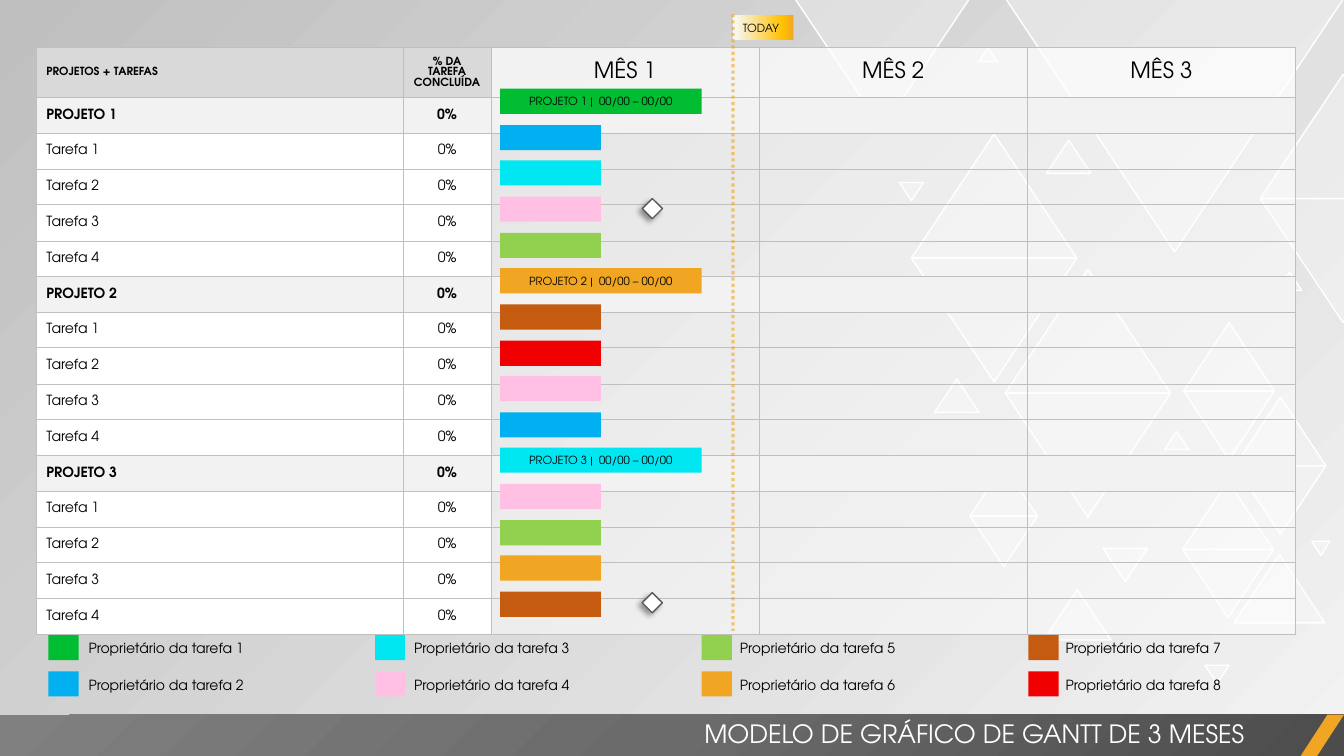
import lxml.etree
import pptx
import pptx.dml.color
import pptx.enum.dml
import pptx.enum.shapes
import pptx.enum.text
import pptx.oxml
import pptx.oxml.ns
import pptx.util

RGB = pptx.dml.color.RGBColor
SHAPE = pptx.enum.shapes.MSO_SHAPE
ALIGN = pptx.enum.text.PP_ALIGN
MIDDLE = pptx.enum.text.MSO_ANCHOR.MIDDLE
qn = pptx.oxml.ns.qn
NS = pptx.oxml.ns.nsdecls("a")

PX = 9144  # 100 px to the inch
FONT = "TeX Gyre Adventor"

BLACK = RGB(0x00, 0x00, 0x00)
WHITE = RGB(0xFF, 0xFF, 0xFF)
HEADER = RGB(0xD9, 0xD9, 0xD9)
BAND = RGB(0xF2, 0xF2, 0xF2)
GRID = RGB(0xBF, 0xBF, 0xBF)
OUTLINE = RGB(0x59, 0x59, 0x59)
CHARCOAL = RGB(0x4C, 0x4C, 0x4C)
DARK_GREY = RGB(0x6B, 0x6B, 0x6B)
MID_GREY = RGB(0x80, 0x80, 0x80)
PALE = RGB(0xF7, 0xFA, 0xFD)
GOLD = RGB(0xFF, 0xC0, 0x00)
ORANGE = RGB(0xF0, 0xA6, 0x22)
OWNERS = [RGB(0x00, 0xBD, 0x32), RGB(0x00, 0xB0, 0xF0), RGB(0x00, 0xE7, 0xF2),
          RGB(0xFF, 0xC0, 0xE3), RGB(0x92, 0xD0, 0x50), ORANGE,
          RGB(0xC5, 0x5A, 0x11), RGB(0xF1, 0x00, 0x02)]

# Owner of each project, followed by the owners of its four tasks
PLAN = [(1, 2, 3, 4, 5), (6, 7, 8, 4, 2), (3, 4, 5, 6, 7)]

# Triangles as (left, top, width); a gem is one pointing up over one pointing down
GEMS = [(904, 133, 164), (997, 267, 164), (1173, 477, 90), (1174, 320, 90),
        (1225, 394, 90), (962, 462, 67), (1250, 74, 164)]
UP = [(1224, 550, 90), (1035, 585, 67), (927, 376, 44), (1155, 428, 24),
      (1267, 270, 24), (971, 47, 18), (1038, 139, 44)]
DOWN = [(997, -2, 336), (1094, 544, 44), (1195, 660, 24), (892, 181, 24),
        (1301, 537, 18), (788, -2, 174)]


def emu(*lengths):
    return [pptx.util.Emu(round(n * PX)) for n in lengths]


def set_alpha(parent, percent):
    color = parent.find(".//" + qn("a:srgbClr"))
    lxml.etree.SubElement(color, qn("a:alpha")).set("val", str(percent * 1000))


def set_gradient(parent, stops, direction):
    """Replace the solid fill of parent; stops are (position, colour, alpha)."""
    gs = "".join(f'<a:gs pos="{pos * 1000}"><a:srgbClr val="{color}">'
                 f'<a:alpha val="{alpha * 1000}"/></a:srgbClr></a:gs>'
                 for pos, color, alpha in stops)
    grad = pptx.oxml.parse_xml(
        f'<a:gradFill {NS} rotWithShape="1"><a:gsLst>{gs}</a:gsLst>{direction}</a:gradFill>')
    parent.replace(parent.find(qn("a:solidFill")), grad)


def linear(angle):
    return f'<a:lin ang="{angle * 60000}" scaled="0"/>'


def add_run(p, text, size, color=BLACK, bold=False, align=ALIGN.LEFT):
    p.alignment = align
    r = p.add_run()
    r.text = text
    r.font.name = FONT
    r.font.size = pptx.util.Pt(size)
    r.font.bold = bold
    r.font.color.rgb = color


def add_box(shapes, kind, box, fill, line=None):
    sp = shapes.add_shape(kind, *emu(*box))
    sp.shadow.inherit = False
    sp.fill.solid()
    sp.fill.fore_color.rgb = fill
    if line is None:
        sp.line.fill.background()
    else:
        sp.line.color.rgb = line
        sp.line.width = pptx.util.Pt(1)
    return sp


def add_label(shapes, box, text, size, color=BLACK, align=ALIGN.LEFT):
    tf = shapes.add_textbox(*emu(*box)).text_frame
    tf.word_wrap = True
    add_run(tf.paragraphs[0], text, size, color, align=align)


def draw_background(slide):
    slide.background.fill.solid()
    set_gradient(slide.element.find(".//" + qn("p:bgPr")),
                 [(0, BAND, 40), (100, GRID, 100)], linear(225))
    group = slide.shapes.add_group_shape()
    height = lambda w: round(w * 0.75)
    triangles = [(t, 0) for t in GEMS + UP] + [(t, 180) for t in DOWN]
    triangles += [((x, y + height(w), w), 180) for x, y, w in GEMS]
    for (x, y, w), rotation in triangles:
        sp = add_box(group.shapes, SHAPE.ISOSCELES_TRIANGLE, (x, y, w, height(w)), WHITE, WHITE)
        sp.rotation = rotation
        set_alpha(sp.element.spPr.find(qn("a:solidFill")), 30)


def draw_footer(slide, x, y, w, h):
    bar = add_box(slide.shapes, SHAPE.RECTANGLE, (x, y, w, h), MID_GREY)
    set_gradient(bar.element.spPr,
                 [(0, CHARCOAL, 100), (50, DARK_GREY, 100), (100, MID_GREY, 100)],
                 '<a:path path="circle"><a:fillToRect l="100000" t="100000"/></a:path>')
    slash = add_box(slide.shapes, SHAPE.PARALLELOGRAM, (x + w - 43, y, 43, h), ORANGE)
    slash.adjustments[0] = 0.65
    add_label(slide.shapes, (x + 525, y - 1, 719, 40),
              "MODELO DE GRÁFICO DE GANTT DE 3 MESES", 18, WHITE, ALIGN.RIGHT)


def fill_cell(cell, text, size, bold, align, fill, alpha=100):
    cell.vertical_anchor = MIDDLE
    cell.fill.solid()
    cell.fill.fore_color.rgb = fill
    tc_pr = cell._tc.get_or_add_tcPr()
    set_alpha(tc_pr, alpha)
    for i, side in enumerate("LRTB"):
        tc_pr.insert(i, pptx.oxml.parse_xml(
            f'<a:ln{side} {NS} w="6350"><a:solidFill><a:srgbClr val="{GRID}"/>'
            f'</a:solidFill></a:ln{side}>'))
    if text:
        add_run(cell.text_frame.paragraphs[0], text, size, bold=bold, align=align)
    else:
        cell.margin_top = cell.margin_bottom = 0


def draw_table(slide, x, y):
    widths = [364, 87, 266, 266, 266]
    heights = [50] + [36 - row % 2 for row in range(1, 16)]
    frame = slide.shapes.add_table(len(heights), len(widths),
                                   *emu(x, y, sum(widths), sum(heights)))
    table = frame.table
    table.first_row = table.horz_banding = False
    for col, w in zip(table.columns, emu(*widths)):
        col.width = w
    for row, h in zip(table.rows, emu(*heights)):
        row.height = h
    # Header
    titles = ["PROJETOS + TAREFAS", "% DA TAREFA CONCLUÍDA", "MÊS 1", "MÊS 2", "MÊS 3"]
    for c, title in enumerate(titles):
        month = c > 1
        fill_cell(table.cell(0, c), title, 16 if month else 8, not month,
                  ALIGN.CENTER if c else ALIGN.LEFT,
                  WHITE if month else HEADER, 75 if month else 100)
    # Projects and their tasks
    for i in range(15):
        project, task = divmod(i, 5)
        name = f"Tarefa {task}" if task else f"PROJETO {project + 1}"
        for c, text in enumerate([name, "0%", "", "", ""]):
            fill_cell(table.cell(i + 1, c), text, 10, not task,
                      ALIGN.CENTER if c else ALIGN.LEFT,
                      WHITE if task else BAND, 50 if task and c > 1 else 100)


def draw_bars(slide, x, y):
    for i, owner in enumerate(sum(PLAN, ())):
        project, task = divmod(i, 5)
        top = round(y + i * 499 / 14)
        bar = add_box(slide.shapes, SHAPE.RECTANGLE,
                      (x, top, 100 if task else 200, 25), OWNERS[owner - 1])
        if not task:
            bar.text_frame.vertical_anchor = MIDDLE
            add_run(bar.text_frame.paragraphs[0],
                    f"PROJETO {project + 1} |  00/00 – 00/00", 8, align=ALIGN.CENTER)
    # Milestones
    for top in (y + 109, y + 500):
        sp = add_box(slide.shapes, SHAPE.DIAMOND, (x + 141, top, 20, 20), WHITE, OUTLINE)
        sp.element.spPr.find(qn("a:effectLst")).append(pptx.oxml.parse_xml(
            f'<a:outerShdw {NS} blurRad="50800" dist="38100" dir="8100000">'
            '<a:srgbClr val="000000"><a:alpha val="40000"/></a:srgbClr></a:outerShdw>'))


def draw_legend(slide, x, y):
    for i, color in enumerate(OWNERS):
        col, row = divmod(i, 2)
        top = y + 36 * row
        add_box(slide.shapes, SHAPE.RECTANGLE, (x + 324 * col, top, 30, 25), color)
        add_label(slide.shapes, (x + 30 + 323 * col, top, 240, 27),
                  f"Proprietário da tarefa {i + 1}", 10)


def draw_today(slide, x, y, h):
    shapes = slide.shapes.add_group_shape().shapes
    flag = add_box(shapes, SHAPE.RECTANGLE, (x, y + 1, 60, 25), GOLD)
    set_gradient(flag.element.spPr,
                 [(0, PALE, 100), (83, GOLD, 100), (100, ORANGE, 100)], linear(0))
    flag.text_frame.vertical_anchor = MIDDLE
    add_run(flag.text_frame.paragraphs[0], "TODAY", 8)
    line = shapes.add_connector(pptx.enum.shapes.MSO_CONNECTOR.STRAIGHT, *emu(x, y, x, y + h))
    line.line.color.rgb = ORANGE
    line.line.width = pptx.util.Pt(2.25)
    line.line.dash_style = pptx.enum.dml.MSO_LINE.ROUND_DOT
    sp_pr = line._element.spPr
    set_alpha(sp_pr, 60)
    lxml.etree.SubElement(sp_pr, qn("a:effectLst"))


def main():
    prs = pptx.Presentation()
    prs.slide_width, prs.slide_height = emu(1333, 750)
    slide = prs.slides.add_slide(prs.slide_layouts[6])
    draw_background(slide)
    draw_footer(slide, 0, 709, 1333, 41)
    draw_table(slide, 36, 47)
    draw_bars(slide, 496, 88)
    draw_legend(slide, 48, 630)
    draw_today(slide, 727, 14, 612)
    prs.save("out.pptx")


if __name__ == "__main__":
    main()
